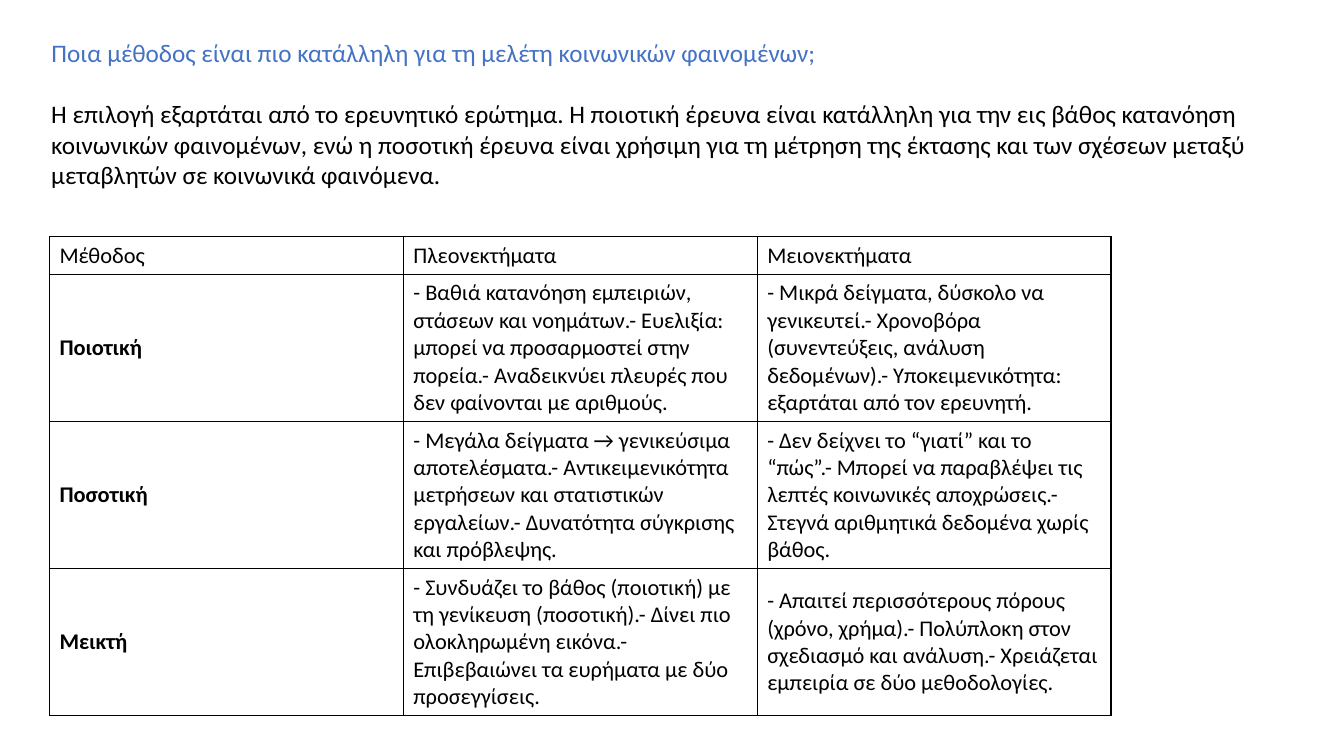
"""Build a slide comparing qualitative, quantitative and mixed research methods."""
import pptx
import pptx.dml.color
import pptx.enum.text
import pptx.oxml
import pptx.oxml.ns
import pptx.util

COLORS = {"heading": "4472C4", "text": "000000", "border": "000000"}
FONT = "Calibri"
LEFT, TOP, WIDTH = 0.41, 0.32, 12.13
LINE = 0.305
COLUMN = 3.51
HEADER_ROW, METHOD_ROW = 0.37, 1.46

HEADING = "Ποια μέθοδος είναι πιο κατάλληλη για τη μελέτη κοινωνικών φαινομένων;"
ANSWER = (
    "Η επιλογή εξαρτάται από το ερευνητικό ερώτημα. Η ποιοτική έρευνα είναι "
    "κατάλληλη για την εις βάθος κατανόηση κοινωνικών φαινομένων, ενώ η ποσοτική "
    "έρευνα είναι χρήσιμη για τη μέτρηση της έκτασης και των σχέσεων μεταξύ "
    "μεταβλητών σε κοινωνικά φαινόμενα."
)
METHODS = [
    ("Μέθοδος", "Πλεονεκτήματα", "Μειονεκτήματα"),
    (
        "Ποιοτική",
        "- Βαθιά κατανόηση εμπειριών, στάσεων και νοημάτων.- Ευελιξία: μπορεί να "
        "προσαρμοστεί στην πορεία.- Αναδεικνύει πλευρές που δεν φαίνονται με αριθμούς.",
        "- Μικρά δείγματα, δύσκολο να γενικευτεί.- Χρονοβόρα (συνεντεύξεις, ανάλυση "
        "δεδομένων).- Υποκειμενικότητα: εξαρτάται από τον ερευνητή.",
    ),
    (
        "Ποσοτική",
        "- Μεγάλα δείγματα → γενικεύσιμα αποτελέσματα.- Αντικειμενικότητα μετρήσεων "
        "και στατιστικών εργαλείων.- Δυνατότητα σύγκρισης και πρόβλεψης.",
        "- Δεν δείχνει το “γιατί” και το “πώς”.- Μπορεί να παραβλέψει τις λεπτές "
        "κοινωνικές αποχρώσεις.- Στεγνά αριθμητικά δεδομένα χωρίς βάθος.",
    ),
    (
        "Μεικτή",
        "- Συνδυάζει το βάθος (ποιοτική) με τη γενίκευση (ποσοτική).- Δίνει πιο "
        "ολοκληρωμένη εικόνα.- Επιβεβαιώνει τα ευρήματα με δύο προσεγγίσεις.",
        "- Απαιτεί περισσότερους πόρους (χρόνο, χρήμα).- Πολύπλοκη στον σχεδιασμό "
        "και ανάλυση.- Χρειάζεται εμπειρία σε δύο μεθοδολογίες.",
    ),
]


def format_text(tf, size, color, bold=False):
    for p in tf.paragraphs:
        p.alignment = pptx.enum.text.PP_ALIGN.LEFT
        for r in p.runs:
            r.font.name = FONT
            r.font.size = pptx.util.Pt(size)
            r.font.bold = bold
            r.font.color.rgb = pptx.dml.color.RGBColor.from_string(COLORS[color])


def add_borders(cell):
    tcPr = cell._tc.get_or_add_tcPr()
    for side in ("lnL", "lnR", "lnT", "lnB"):
        tcPr.append(pptx.oxml.parse_xml(
            f'<a:{side} {pptx.oxml.ns.nsdecls("a")} w="12700"><a:solidFill>'
            f'<a:srgbClr val="{COLORS["border"]}"/></a:solidFill></a:{side}>'
        ))


prs = pptx.Presentation()
prs.slide_width = pptx.util.Inches(13.33)
prs.slide_height = pptx.util.Inches(7.5)
slide = prs.slides.add_slide(prs.slide_layouts[5])

title = slide.shapes.title
answer = slide.shapes.add_textbox(0, 0, 0, 0)
for sp, text, line, lines, color in (
    (title, HEADING, 0, 1, "heading"),
    (answer, ANSWER, 2, 3, "text"),
):
    sp.left, sp.top, sp.width, sp.height = (
        pptx.util.Inches(v) for v in (LEFT, TOP + line * LINE, WIDTH, lines * LINE + 0.1)
    )
    tf = sp.text_frame
    tf.text = text
    tf.word_wrap = True
    tf.auto_size = pptx.enum.text.MSO_AUTO_SIZE.NONE
    tf.vertical_anchor = pptx.enum.text.MSO_ANCHOR.TOP
    format_text(tf, 18, color)

table = slide.shapes.add_table(
    len(METHODS), len(METHODS[0]),
    pptx.util.Inches(0.49), pptx.util.Inches(2.35),
    pptx.util.Inches(3 * COLUMN), pptx.util.Inches(HEADER_ROW + 3 * METHOD_ROW),
).table
table.first_row = False
table.horz_banding = False
for column in table.columns:
    column.width = pptx.util.Inches(COLUMN)
for i, texts in enumerate(METHODS):
    table.rows[i].height = pptx.util.Inches(METHOD_ROW if i else HEADER_ROW)
    for j, text in enumerate(texts):
        cell = table.cell(i, j)
        cell.text = text
        cell.vertical_anchor = pptx.enum.text.MSO_ANCHOR.MIDDLE
        format_text(cell.text_frame, 16, "text", bold=i > 0 and j == 0)
        add_borders(cell)
        cell.fill.background()

prs.save("out.pptx")
